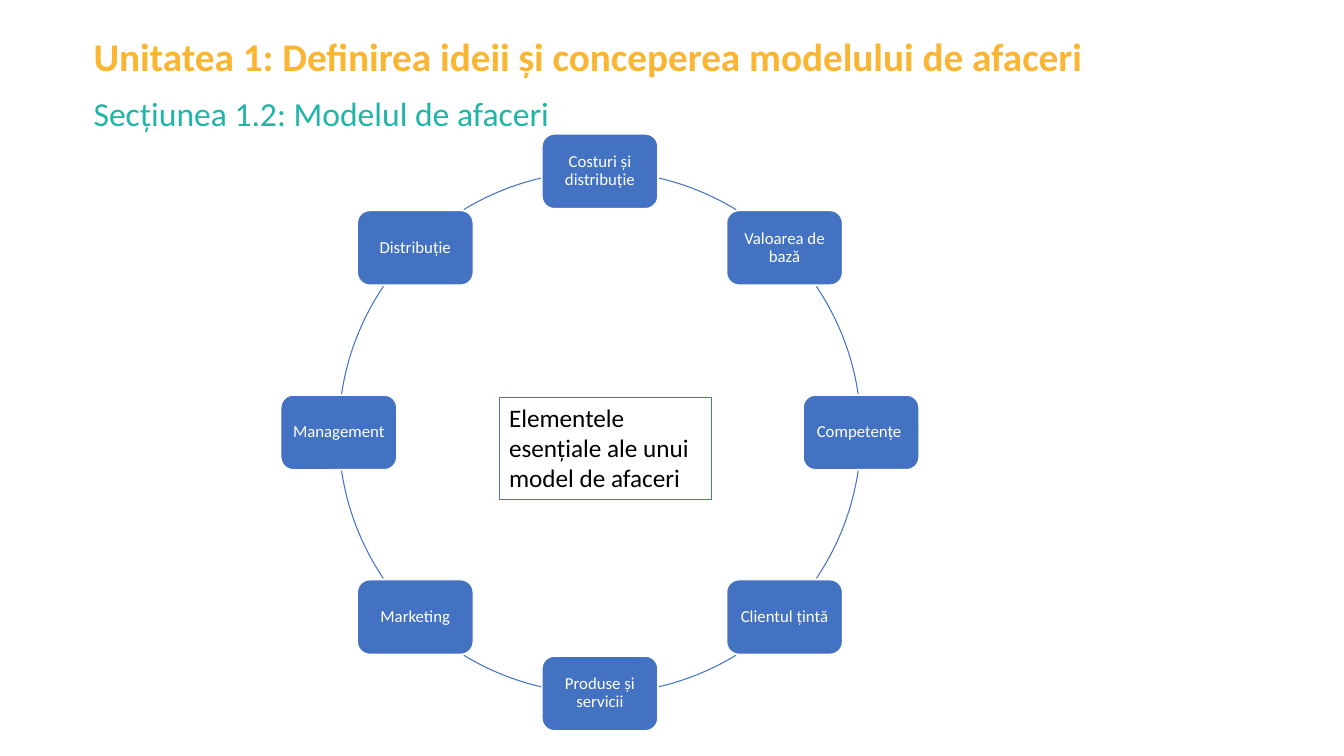
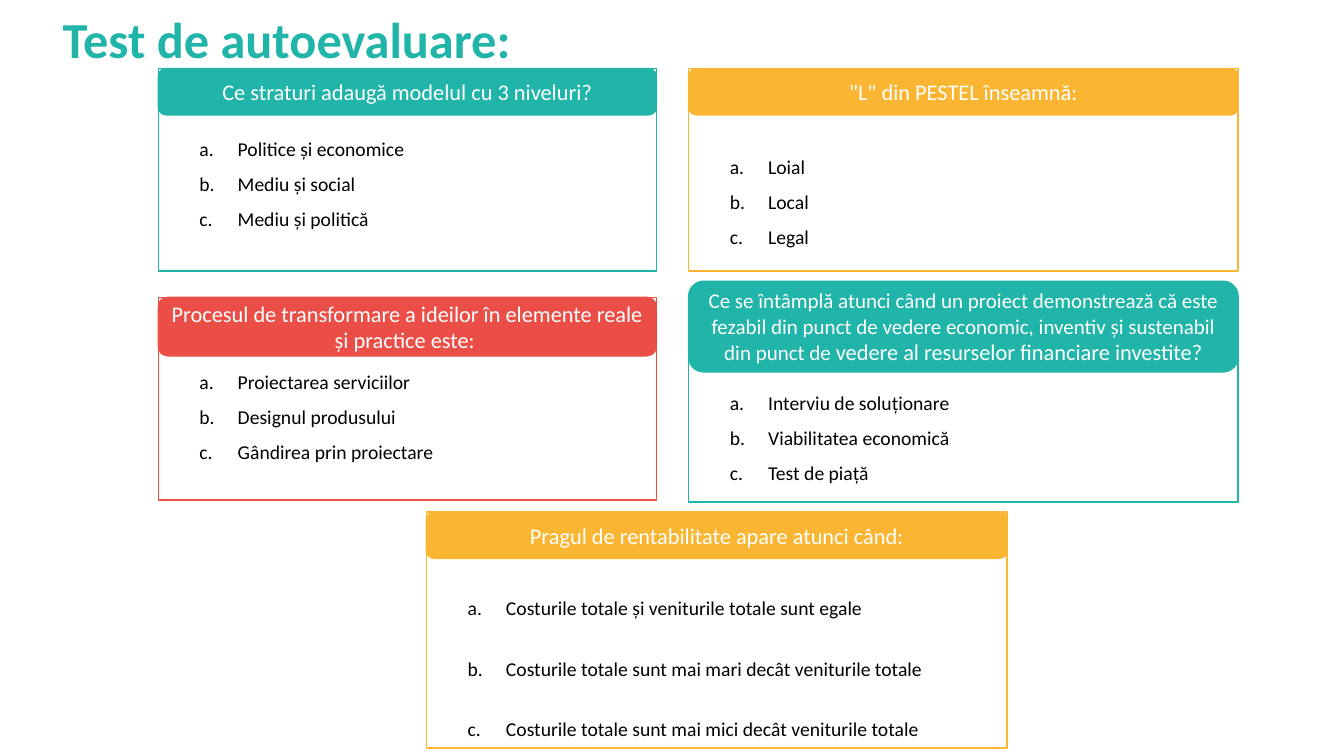
from math import cos, radians, sin

from lxml.etree import SubElement
from pptx import Presentation
from pptx.dml.color import RGBColor
from pptx.enum.shapes import MSO_SHAPE
from pptx.enum.text import MSO_ANCHOR, PP_ALIGN
from pptx.oxml.ns import qn
from pptx.util import Inches, Pt

FONT = "Calibri"
TEAL, AMBER, RED = "21B4A9", "FAB632", "EA4E46"
BLUE, FRAME_BLUE, WHITE, BLACK = "4372C3", "4472C4", "FFFFFF", "000000"


def add_box(shapes, kind, box, fill=None, line=None, weight=1):
    """Add a preset shape, or a text box when kind is None."""
    if kind is None:
        return shapes.add_textbox(*map(Inches, box))
    shape = shapes.add_shape(kind, *map(Inches, box))
    shape.shadow.inherit = False
    if fill:
        shape.fill.solid()
        shape.fill.fore_color.rgb = RGBColor.from_string(fill)
    else:
        shape.fill.background()
    shape.line.color.rgb = RGBColor.from_string(line)
    shape.line.width = Pt(weight)
    return shape


def write(shape, *lines, size, color, bold=False, align=PP_ALIGN.LEFT,
          anchor=MSO_ANCHOR.TOP, margins=(0.1, 0.05), spacing=None, lettered=False):
    """Write one paragraph per line; a line is a text or a tuple of runs."""
    frame = shape.text_frame
    frame.word_wrap = True
    frame.vertical_anchor = anchor
    frame.margin_left = frame.margin_right = Inches(margins[0])
    frame.margin_top = frame.margin_bottom = Inches(margins[1])
    for index, line in enumerate(lines):
        paragraph = frame.add_paragraph() if index else frame.paragraphs[0]
        paragraph.alignment = align
        if spacing:
            paragraph.line_spacing = spacing
        if lettered:
            properties = paragraph._p.get_or_add_pPr()
            properties.set("marL", str(Inches(0.38)))
            properties.set("indent", str(-Inches(0.38)))
            SubElement(properties, qn("a:buAutoNum"), type="alphaLcPeriod")
        for text in (line,) if isinstance(line, str) else line:
            run = paragraph.add_run()
            run.text = text
            run.font.name = FONT
            run.font.size = Pt(size)
            run.font.bold = bold
            run.font.color.rgb = RGBColor.from_string(color)


prs = Presentation()
prs.slide_width, prs.slide_height = Inches(13.33), Inches(7.5)
blank = prs.slide_layouts[6]

# Slide 1: ring of business model elements
model_slide = prs.slides.add_slide(blank)
unit_title = add_box(model_slide.shapes, None, (0.83, 0.27, 10.23, 0.57))
write(unit_title, "Unitatea 1: Definirea ideii și conceperea modelului de afaceri",
      size=28, color=AMBER, bold=True)

CENTER_X, CENTER_Y, RADIUS = 5.95, 4.29, 2.59
NODE_W, NODE_H = 1.15, 0.74
ring = model_slide.shapes.add_group_shape().shapes

# Visible arcs between the nodes, in degrees from the start of each quadrant
for quadrant in range(4):
    gaps = [(13, 31.4), (56, 81.6)] if quadrant % 2 == 0 else [(8.4, 34), (58.6, 77)]
    for start, end in gaps:
        arc = add_box(ring, MSO_SHAPE.ARC,
                      (CENTER_X - RADIUS, CENTER_Y - RADIUS, 2 * RADIUS, 2 * RADIUS),
                      line=BLUE, weight=0.75)
        for position, angle in enumerate((start, end)):
            # Arc angles are stored in 60000ths of a degree, adjustments in 100000ths
            arc.adjustments[position] = (angle + 90 * quadrant + 270) % 360 * 0.6

elements = ["Costuri și distribuție", "Valoarea de bază", "Competențe ", "Clientul țintă",
            "Produse și servicii", "Marketing", "Management ", "Distribuție"]
for index, element in enumerate(elements):
    angle = radians(index * 360 / len(elements))
    node = add_box(ring, MSO_SHAPE.ROUNDED_RECTANGLE,
                   (CENTER_X + RADIUS * sin(angle) - NODE_W / 2,
                    CENTER_Y - RADIUS * cos(angle) - NODE_H / 2, NODE_W, NODE_H),
                   fill=BLUE, line=WHITE)
    write(node, element, size=12, color=WHITE, align=PP_ALIGN.CENTER,
          anchor=MSO_ANCHOR.MIDDLE, margins=(0.08, 0.08), spacing=0.9)

ring_caption = add_box(model_slide.shapes, MSO_SHAPE.RECTANGLE, (4.95, 3.94, 2.11, 1.02),
                       line=FRAME_BLUE, weight=0.75)
write(ring_caption, "Elementele esențiale ale unui model de afaceri", size=18, color=BLACK)
section_title = add_box(model_slide.shapes, None, (0.83, 0.87, 8.41, 0.5))
write(section_title, "Secțiunea 1.2: Modelul de afaceri", size=24, color=TEAL)

# Slide 2: self-assessment cards
test_slide = prs.slides.add_slide(blank)
test_title = add_box(test_slide.shapes, None, (0.62, 0.08, 9.02, 0.61))
write(test_title, "Test de autoevaluare:", size=36, color=TEAL, bold=True,
      anchor=MSO_ANCHOR.MIDDLE, margins=(0, 0))

# Colour, card box, header top and height, answers top and line spacing, question, answers
cards = [
    (TEAL, (1.57, 0.68, 4.94, 2.01), 0.68, 0.46, 1.19, 1.5,
     ("Ce straturi adaugă modelul cu 3 niveluri?",),
     ("Politice și economice", "Mediu și social", "Mediu și politică")),
    (AMBER, (6.83, 0.68, 5.45, 2.01), 0.68, 0.46, 1.37, 1.5,
     ('"L" din PESTEL înseamnă:',),
     ("Loial", "Local", "Legal")),
    (RED, (1.57, 2.95, 4.94, 2.01), 2.95, 0.58, 3.5, 1.5,
     ("Procesul de transformare a ideilor în elemente reale și practice este: ",),
     ("Proiectarea serviciilor", "Designul produsului", "Gândirea prin proiectare")),
    (TEAL, (6.83, 2.97, 5.45, 2.01), 2.79, 0.9, 3.71, 1.5,
     ("Ce se întâmplă atunci când un proiect demonstrează că este fezabil din punct de "
      "vedere economic, inventiv și sustenabil din punct de ",
      "vedere al resurselor financiare investite?"),
     ("Interviu de soluționare", "Viabilitatea economică", "Test de piață")),
    (AMBER, (4.23, 5.08, 5.76, 2.34), 5.08, 0.46, 5.5, 2.57,
     ("Pragul de rentabilitate apare atunci când:",),
     ("Costurile totale și veniturile totale sunt egale",
      "Costurile totale sunt mai mari decât veniturile totale",
      "Costurile totale sunt mai mici decât veniturile totale")),
]
for color, box, header_top, header_height, answers_top, spacing, question, answers in cards:
    left, top, width, height = box
    card = test_slide.shapes.add_group_shape().shapes
    add_box(card, MSO_SHAPE.RECTANGLE, box, line=color)
    header = add_box(card, MSO_SHAPE.ROUNDED_RECTANGLE,
                     (left, header_top, width, header_height), fill=color, line=color)
    write(header, question, size=16, color=WHITE, align=PP_ALIGN.CENTER,
          anchor=MSO_ANCHOR.MIDDLE)
    # The opening part of a long question is set slightly smaller
    for opening in header.text_frame.paragraphs[0].runs[:-1]:
        opening.font.size = Pt(15)
    choices = add_box(card, None, (left + 0.31, answers_top, width - 0.6,
                                   0.1 + 0.24 * spacing * len(answers)))
    write(choices, *answers, size=14, color=BLACK, spacing=spacing, lettered=True)

prs.save("out.pptx")
